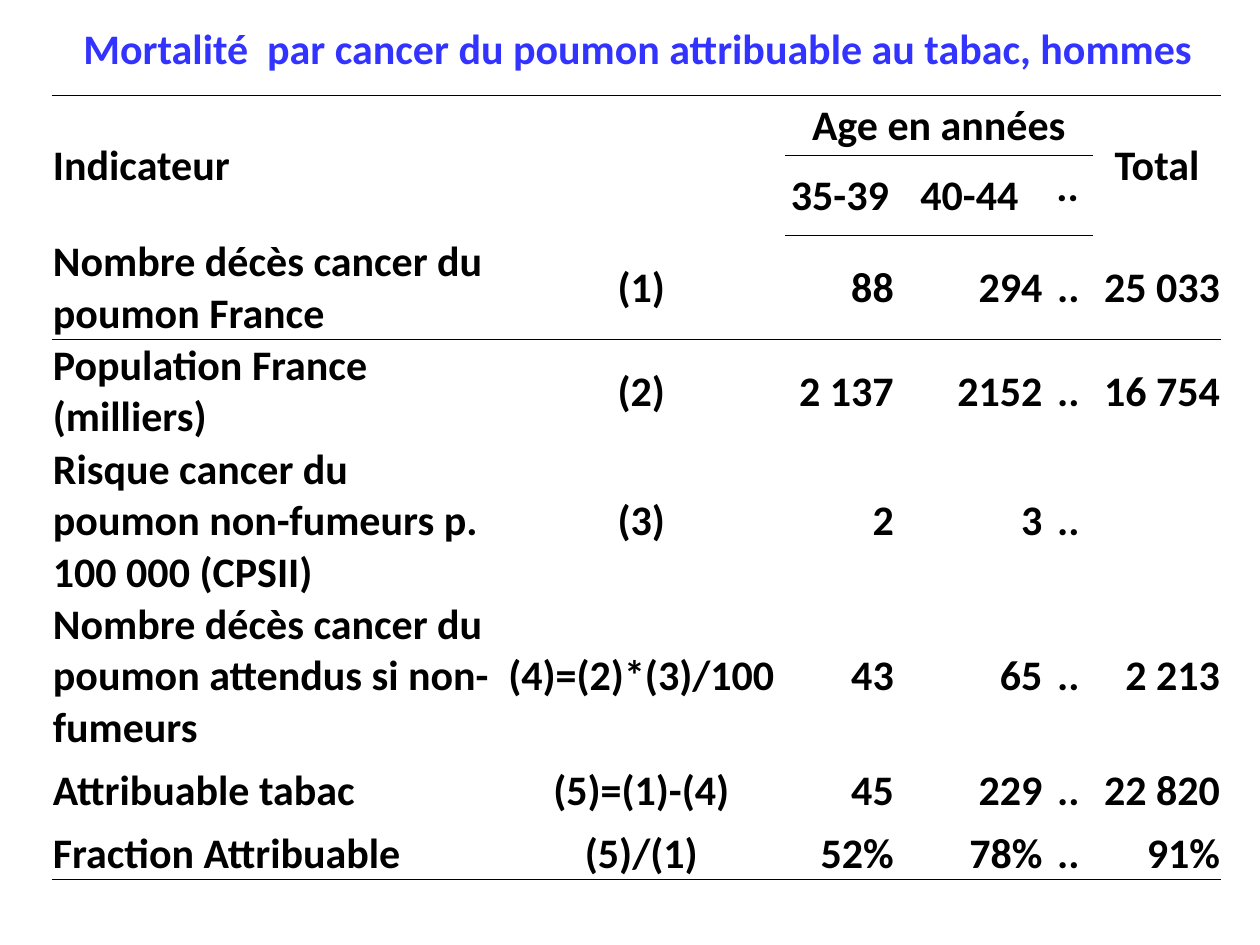
from lxml import etree
from pptx import Presentation
from pptx.dml.color import RGBColor
from pptx.enum import text
from pptx.oxml.ns import qn
from pptx.util import Pt

BLACK = RGBColor(0x00, 0x00, 0x00)
BLUE = RGBColor(0x33, 0x33, 0xFF)

LEFT, CENTER, RIGHT = text.PP_ALIGN.LEFT, text.PP_ALIGN.CENTER, text.PP_ALIGN.RIGHT
TOP, MIDDLE = text.MSO_ANCHOR.TOP, text.MSO_ANCHOR.MIDDLE

COLUMN_WIDTHS = [255, 164, 63, 85, 28, 73.5]
ROW_HEIGHTS = [34, 46, 58, 58, 88, 88, 42, 30]
COLUMN_ALIGNS = [LEFT, CENTER, RIGHT, RIGHT, CENTER, RIGHT]
HEADER_ROWS = 2
AGE_COLUMNS = range(2, 5)
ROWS = [
    ["Indicateur", "", "Age en années", "", "", "Total"],
    ["", "", "35-39", "40-44", "..", ""],
    ["Nombre décès cancer du poumon France", "(1)", "88", "294", "..", "25 033"],
    ["Population France (milliers)", "(2)", "2 137", "2152", "..", "16 754"],
    ["Risque cancer du poumon non-fumeurs p. 100 000 (CPSII)", "(3)", "2", "3", "..", ""],
    ["Nombre décès cancer du poumon attendus si non-fumeurs",
     "(4)=(2)*(3)/100", "43", "65", "..", "2 213"],
    ["Attribuable tabac", "(5)=(1)-(4)", "45", "229", "..", "22 820"],
    ["Fraction Attribuable", "(5)/(1)", "52%", "78%", "..", "91%"],
]
# First row, first column, last row, last column
MERGES = [(0, 0, 1, 1), (0, 2, 0, 4), (0, 5, 1, 5)]
# Horizontal rules, numbered by the row below them
FULL_RULES = {0, 2, 3, len(ROWS)}
AGE_RULE = 1


def has_rule(edge, column):
    return edge in FULL_RULES or (edge == AGE_RULE and column in AGE_COLUMNS)


class SlideBuilder:
    font, size, rule_width = "Calibri", 24, 0.75

    def __init__(self, slide):
        self.slide = slide

    def set_text(self, frame, content, color, align):
        frame.text = content
        frame.word_wrap = True
        paragraph = frame.paragraphs[0]
        paragraph.alignment = align
        for run in paragraph.runs:
            run.font.name = self.font
            run.font.size = Pt(self.size)
            run.font.bold = True
            run.font.color.rgb = color

    def title(self, content, left, top, width, height):
        title = self.slide.shapes.title
        title.left, title.top = Pt(left), Pt(top)
        title.width, title.height = Pt(width), Pt(height)
        self.set_text(title.text_frame, content, BLUE, CENTER)
        title.text_frame.auto_size = text.MSO_AUTO_SIZE.NONE
        title.text_frame.vertical_anchor = MIDDLE

    def border(self, cell, side, ruled):
        line = etree.SubElement(cell._tc.get_or_add_tcPr(), qn(f"a:{side}"))
        if ruled:
            line.set("w", str(Pt(self.rule_width)))
            fill = etree.SubElement(line, qn("a:solidFill"))
            etree.SubElement(fill, qn("a:srgbClr"), val=str(BLACK))
        else:
            etree.SubElement(line, qn("a:noFill"))

    def cell(self, cell, content, align, row, column):
        self.set_text(cell.text_frame, content, BLACK, align)
        cell.vertical_anchor = MIDDLE
        cell.margin_left = cell.margin_right = cell.margin_top = Pt(0.75)
        cell.margin_bottom = Pt(0)
        for side, ruled in (("lnL", False), ("lnR", False),
                            ("lnT", has_rule(row, column)),
                            ("lnB", has_rule(row + 1, column))):
            self.border(cell, side, ruled)
        cell.fill.background()

    def table(self, left, top):
        table = self.slide.shapes.add_table(
            len(ROWS), len(COLUMN_WIDTHS), Pt(left), Pt(top),
            Pt(sum(COLUMN_WIDTHS)), Pt(sum(ROW_HEIGHTS))).table
        table.first_row = table.horz_banding = False
        for column, width in zip(table.columns, COLUMN_WIDTHS):
            column.width = Pt(width)
        for row, height in zip(table.rows, ROW_HEIGHTS):
            row.height = Pt(height)
        for r, row in enumerate(ROWS):
            for c, content in enumerate(row):
                in_header = r < HEADER_ROWS and c > 0
                align = CENTER if in_header else COLUMN_ALIGNS[c]
                self.cell(table.cell(r, c), content, align, r, c)
        for r1, c1, r2, c2 in MERGES:
            table.cell(r1, c1).merge(table.cell(r2, c2))
        return table


def main():
    deck = Presentation()
    deck.slide_width, deck.slide_height = Pt(720), Pt(540)
    builder = SlideBuilder(deck.slides.add_slide(deck.slide_layouts[5]))

    # Title
    builder.title("Mortalité  par cancer du poumon attribuable au tabac, hommes",
                  0, 9.5, 729, 36)

    # Mortality table
    table = builder.table(29.5, 54.7)

    # The header dots sit at the top left of their cell
    dots = table.cell(1, 4)
    dots.vertical_anchor = TOP
    dots.margin_left = dots.margin_right = Pt(7.2)
    dots.margin_top = dots.margin_bottom = Pt(3.6)
    dots.text_frame.paragraphs[0].alignment = LEFT

    deck.save("out.pptx")


if __name__ == "__main__":
    main()
